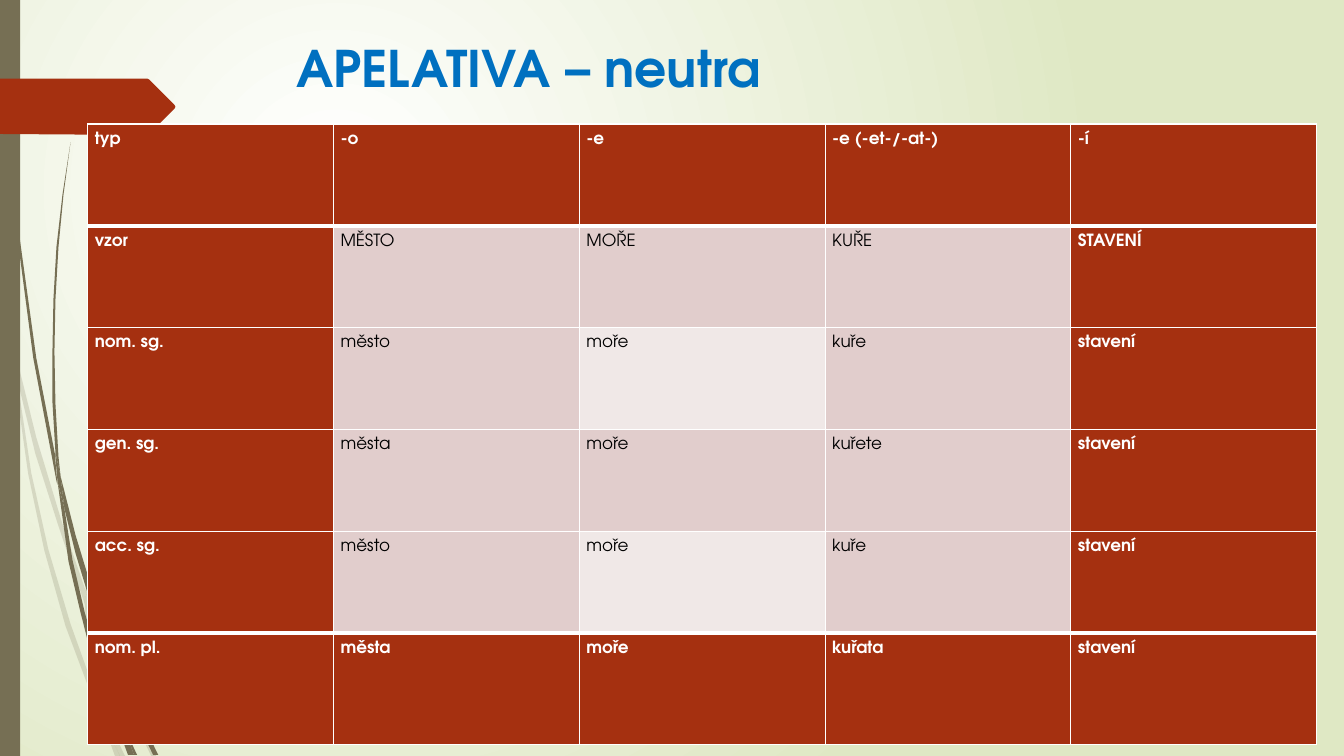
from lxml import etree
from pptx import Presentation
from pptx.dml.color import RGBColor
from pptx.enum.shapes import MSO_SHAPE as Shape
from pptx.enum.text import MSO_ANCHOR as Anchor
from pptx.oxml.ns import qn
from pptx.util import Inches, Pt

FONT = "TeX Gyre Adventor"
RUST, OLIVE, WHITE, BLACK = "A53010", "766F54", "FFFFFF", "000000"
ROSE, PALE = "E1CDCC", "F0E8E7"


def color(hex_code):
    return RGBColor.from_string(hex_code)


def add_outline(shapes, points, fill):
    corners = [(Inches(x), Inches(y)) for x, y in points]
    builder = shapes.build_freeform(*corners[0])
    builder.add_line_segments(corners[1:], close=True)
    outline = builder.convert_to_shape()
    outline.shadow.inherit = False
    outline.fill.solid()
    outline.fill.fore_color.rgb = color(fill)
    outline.line.fill.background()
    return outline


deck = Presentation()
deck.slide_width, deck.slide_height = Inches(13.33), Inches(7.5)
page = deck.slides.add_slide(deck.slide_layouts[6])

# Background: radial gradient centred in the upper left
backdrop = page.background.fill
backdrop.gradient()
for stop, shade in zip(backdrop.gradient_stops, (WHITE, "DFE8C4")):
    stop.color.rgb = color(shade)
gradient = page._element.find(".//" + qn("a:gradFill"))
gradient.remove(gradient.find(qn("a:lin")))
radial = etree.SubElement(gradient, qn("a:path"), {"path": "circle"})
etree.SubElement(radial, qn("a:fillToRect"),
                 {"l": "50000", "t": "50000", "r": "100000", "b": "100000"})

# Grass blades: faint ones behind, solid ones in front
faint_blades = [
    [(0.11, 3.5), (0.09, 3.22), (0, 2.82), (0, 2.99), (0.1, 3.44)],
    [(0.58, 5.22), (0.84, 5.99), (0.85, 5.86), (0.62, 5.2), (0.36, 4.34), (0.14, 3.45),
     (0.17, 3.76), (0.35, 4.5)],
    [(0.92, 6.07), (0.88, 5.96), (0.88, 6.1), (1.23, 6.94), (1.5, 7.5), (1.55, 7.5),
     (1.27, 6.92)],
    [(1.19, 7.5), (1.24, 7.5), (1.05, 7.11)],
    [(0.93, 6.83), (0.7, 6.19), (0.48, 5.45), (0.31, 4.69), (0.17, 3.76), (0.11, 3.5),
     (0.28, 4.7), (0.44, 5.46), (0.65, 6.21), (0.92, 6.93), (1.01, 7.14), (0.99, 7.07)],
    [(0.84, 5.99), (0.87, 6.46), (0.93, 6.83), (0.96, 6.92), (1.05, 7.11), (1.03, 7.06),
     (0.91, 6.46), (0.88, 6.1), (0.88, 6.08)],
    [(0.88, 5.84), (0.95, 5.22), (1.1, 4.62), (1.32, 4.04), (1.6, 3.49), (1.92, 2.95),
     (2.29, 2.45), (2.68, 1.98), (2.9, 1.75), (3.12, 1.54), (3.12, 1.53), (2.89, 1.75),
     (2.68, 1.97), (2.28, 2.44), (1.9, 2.94), (1.58, 3.48), (1.29, 4.03), (1.07, 4.61),
     (0.91, 5.22), (0.85, 5.84), (0.85, 5.86), (0.88, 5.96)],
    [(1.01, 7.14), (1.14, 7.5), (1.19, 7.5)],
    [(0.88, 6.08), (0.88, 6.1), (0.88, 5.96), (0.85, 5.86), (0.84, 5.99)],
    [(0.96, 6.92), (0.93, 6.83), (0.99, 7.07), (1.01, 7.14), (1.19, 7.5), (1.05, 7.11)],
]
solid_blades = [
    [(0.07, 1.1), (0.17, 2.33), (0.33, 3.55), (0.56, 4.77), (0.57, 4.81), (0.55, 4.57),
     (0.55, 4.53), (0.36, 3.55), (0.19, 2.32), (0.08, 1.09), (0.05, 0.48), (0.04, 0),
     (0.03, 0), (0.04, 0.48)],
    [(0.88, 5.92), (1.06, 6.45), (1.06, 6.31), (0.93, 5.9), (0.75, 5.31), (0.6, 4.72),
     (0.64, 5.05), (0.75, 5.49)],
    [(1.13, 6.49), (1.1, 6.41), (1.11, 6.56), (1.32, 7.08), (1.52, 7.49), (1.57, 7.49),
     (1.36, 7.06)],
    [(1.1, 6.91), (0.98, 6.57), (0.84, 6.07), (0.72, 5.56), (0.64, 5.05), (0.57, 4.77),
     (0.68, 5.57), (0.8, 6.08), (0.93, 6.59), (1.11, 7.08), (1.17, 7.22), (1.16, 7.17)],
    [(0.6, 4.72), (0.58, 4.53), (0.55, 4.01), (0.54, 3.49), (0.55, 2.97), (0.58, 2.45),
     (0.63, 1.93), (0.7, 1.41), (0.62, 1.93), (0.56, 2.45), (0.53, 2.97), (0.52, 3.49),
     (0.52, 3.99), (0.55, 4.49)],
    [(1.33, 7.49), (1.36, 7.49), (1.22, 7.19)],
    [(0.57, 4.77), (0.64, 5.05), (0.6, 4.72), (0.55, 4.49), (0.55, 4.53)],
    [(1.11, 6.33), (1.15, 5.92), (1.25, 5.52), (1.4, 5.13), (1.58, 4.76), (1.8, 4.4),
     (2.05, 4.06), (2.31, 3.74), (2.45, 3.59), (2.61, 3.44), (2.6, 3.44), (2.45, 3.58),
     (2.31, 3.73), (2.04, 4.05), (1.78, 4.39), (1.56, 4.74), (1.37, 5.12), (1.22, 5.51),
     (1.11, 5.91), (1.06, 6.31), (1.1, 6.41)],
    [(1.17, 7.22), (1.27, 7.49), (1.31, 7.49)],
    [(1.06, 6.45), (1.1, 6.91), (1.16, 7.06), (1.22, 7.19), (1.21, 7.16), (1.11, 6.56),
     (1.09, 6.51)],
    [(1.06, 6.45), (1.09, 6.51), (1.11, 6.56), (1.1, 6.41), (1.06, 6.31)],
    [(1.16, 7.06), (1.1, 6.91), (1.16, 7.17), (1.17, 7.22), (1.3, 7.49), (1.33, 7.49),
     (1.22, 7.19)],
]
for blades, opacity in ((faint_blades, 20), (solid_blades, 100)):
    tuft = page.shapes.add_group_shape()
    for points in blades:
        blade = add_outline(tuft.shapes, points, OLIVE)
        if opacity < 100:
            tint = blade._element.spPr.find(".//" + qn("a:srgbClr"))
            etree.SubElement(tint, qn("a:alpha"), {"val": str(opacity * 1000)})

# Left bar and arrow tab
bar = page.shapes.add_shape(Shape.RECTANGLE, 0, 0, Inches(0.2), Inches(7.5))
bar.shadow.inherit = False
bar.fill.solid()
bar.fill.fore_color.rgb = color(OLIVE)
bar.line.fill.background()
add_outline(page.shapes, [(0, 0.78), (1.46, 0.78), (1.48, 0.79), (1.73, 1.04), (1.74, 1.06),
                          (1.73, 1.08), (1.48, 1.33), (1.46, 1.34), (0, 1.33)], RUST)

# Title
box = page.shapes.add_textbox(Inches(2.84), Inches(0.32), Inches(9.75), Inches(0.91))
box.text_frame.word_wrap = True
box.text_frame.vertical_anchor = Anchor.TOP
para = box.text_frame.paragraphs[0]
para.text = "APELATIVA – neutra"
para.font.name, para.font.size, para.font.bold = FONT, Pt(36), True
para.font.color.rgb = color("0070C0")

# Declension table
rows = [
    ["typ", "-o", "-e", "-e (-et-/-at-)", "-í"],
    ["vzor", "MĚSTO", "MOŘE", "KUŘE", "STAVENÍ"],
    ["nom. sg.", "město", "moře", "kuře", "stavení"],
    ["gen. sg.", "města", "moře", "kuřete", "stavení"],
    ["acc. sg.", "město", "moře", "kuře", "stavení"],
    ["nom. pl.", "města", "moře", "kuřata", "stavení"],
]
last_row, last_column = len(rows) - 1, len(rows[0]) - 1
table = page.shapes.add_table(len(rows), len(rows[0]), Inches(0.87), Inches(1.23),
                              Inches(12.19), Inches(6.17)).table
for column in table.columns:
    column.width = Inches(12.19 / len(rows[0]))
for r, words in enumerate(rows):
    table.rows[r].height = Inches(1.11 if r == last_row else 1.01)
    for c, word in enumerate(words):
        cell = table.cell(r, c)
        framed = r in (0, last_row) or c in (0, last_column)
        striped = c == 2 and r in (2, 4)
        cell.fill.solid()
        cell.fill.fore_color.rgb = color(RUST if framed else PALE if striped else ROSE)
        cell.margin_left = cell.margin_right = Inches(0.07)
        cell.margin_top = cell.margin_bottom = 0
        para = cell.text_frame.paragraphs[0]
        para.text = word
        para.line_spacing = 1.5
        para.font.name, para.font.size, para.font.bold = FONT, Pt(12), framed
        para.font.color.rgb = color(WHITE if framed else BLACK)

        # White borders, thick below the first row and above the last
        thick = {"lnT": r in (1, last_row), "lnB": r in (0, last_row - 1)}
        for position, side in enumerate(("lnL", "lnR", "lnT", "lnB")):
            border = etree.Element(qn("a:" + side), {"w": str(Pt(3 if thick.get(side) else 1))})
            paint = etree.SubElement(border, qn("a:solidFill"))
            etree.SubElement(paint, qn("a:srgbClr"), {"val": WHITE})
            cell._tc.get_or_add_tcPr().insert(position, border)

deck.save("out.pptx")
